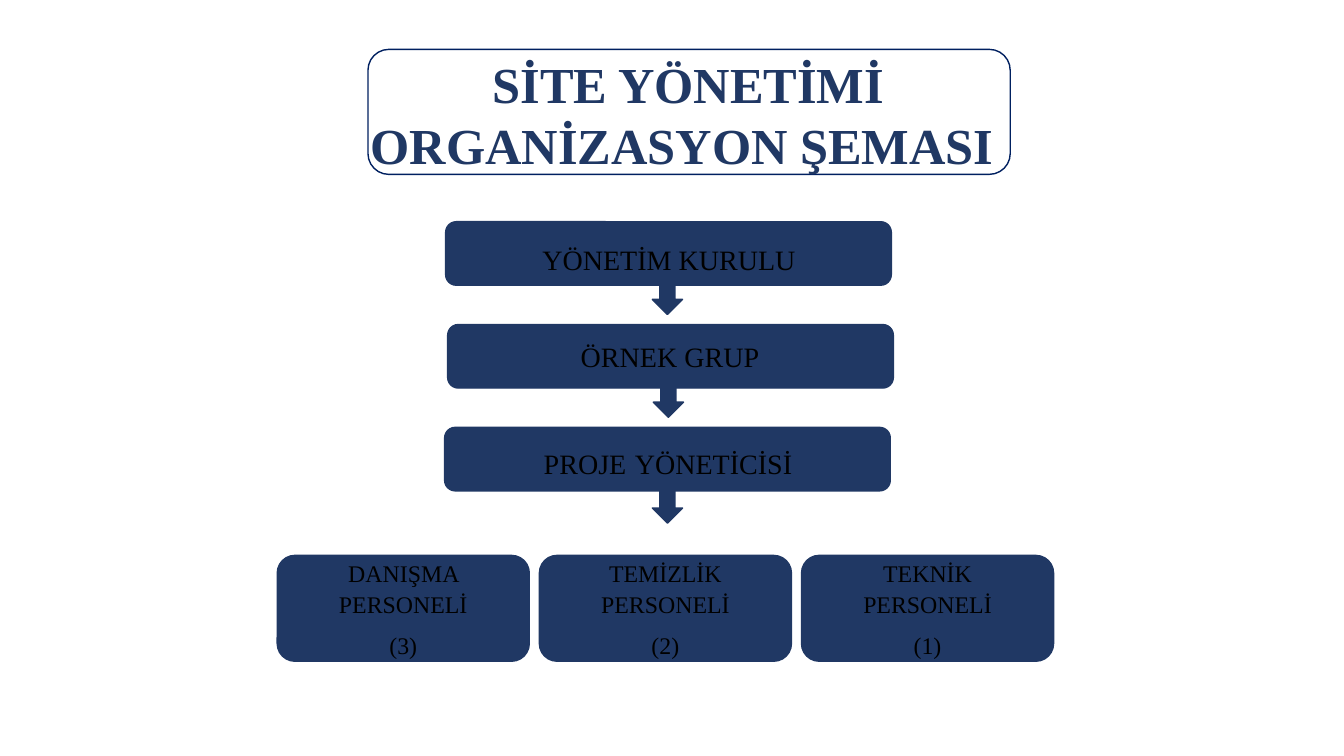
"""Build the site management organisation chart slide."""
import pptx
import pptx.dml.color
import pptx.enum.shapes
import pptx.enum.text
import pptx.util

Inches = pptx.util.Inches
Pt = pptx.util.Pt
SHAPES = pptx.enum.shapes.MSO_SHAPE
ANCHORS = pptx.enum.text.MSO_ANCHOR

NAVY, TITLE_BORDER, BLACK = "203864", "002060", "000000"
TITLE = "SİTE YÖNETİMİ ORGANİZASYON ŞEMASI "
LEVELS = [
    {"runs": [("YÖNETİM KURULU", 20)], "left": 4.42, "label": (4.44, 2.33, 4.39, 0.44), "arrow": (6.47, 2.72)},
    {"runs": [("ÖRNEK GRUP", 20)], "left": 4.44, "label": (4.45, 3.3, 4.39, 0.44), "arrow": (6.48, 3.74)},
    {"runs": [("PROJE", 20), (" ", 24), ("YÖNETİCİSİ", 20)], "left": 4.41,
     "label": (4.43, 4.3, 4.39, 0.51), "arrow": (6.47, 4.79)},
]
TEAMS = [("DANIŞMA PERSONELİ", 3), ("TEMİZLİK PERSONELİ", 2), ("TEKNİK PERSONELİ", 1)]
LEVEL_TOP, LEVEL_STEP, LEVEL_SIZE = 2.2, 1.02, (4.42, 0.63)
ARROW_SIZE = (0.3, 0.4)
TEAM_LEFT, TEAM_TOP, TEAM_STEP, TEAM_SIZE = 2.75, 5.51, 2.6, (2.5, 1.05)
BODY_FORMAT = {"alignment": pptx.enum.text.PP_ALIGN.CENTER, "line_spacing": 1.07, "space_after": Pt(8)}
TITLE_FORMAT = {"alignment": pptx.enum.text.PP_ALIGN.CENTER}


def set_color(color_format, value):
    color_format.rgb = pptx.dml.color.RGBColor.from_string(value)


def set_values(target, values):
    for name, value in values.items():
        setattr(target, name, value)


def add_box(slide, kind, place, fill=NAVY, border=NAVY):
    shape = slide.shapes.add_shape(kind, *map(Inches, place))
    shape.shadow.inherit = False
    if fill:
        shape.fill.solid()
        set_color(shape.fill.fore_color, fill)
    else:
        shape.fill.background()
    set_color(shape.line.color, border)
    shape.line.width = Pt(1)
    return shape


def write(shape, paragraphs, paragraph_format, color=BLACK, bold=False, **frame_values):
    frame = shape.text_frame
    set_values(frame, {"word_wrap": True, **frame_values})
    for index, runs in enumerate(paragraphs):
        paragraph = frame.add_paragraph() if index else frame.paragraphs[0]
        set_values(paragraph, paragraph_format)
        for text, size in runs:
            run = paragraph.add_run()
            run.text = text
            set_values(run.font, {"name": "Times New Roman", "size": Pt(size), "bold": bold})
            set_color(run.font.color, color)


def add_label(slide, place, runs, paragraph_format, **style):
    label = slide.shapes.add_textbox(*map(Inches, place))
    write(label, [runs], paragraph_format, **style)


def main():
    presentation = pptx.Presentation()
    set_values(presentation, {"slide_width": Inches(13.33), "slide_height": Inches(7.5)})
    slide = presentation.slides.add_slide(presentation.slide_layouts[6])

    for level in LEVELS:
        add_box(slide, SHAPES.DOWN_ARROW, (*level["arrow"], *ARROW_SIZE))

    add_box(slide, SHAPES.ROUNDED_RECTANGLE, (3.65, 0.49, 6.37, 1.24), fill=None, border=TITLE_BORDER)
    add_label(slide, (3.33, 0.48, 7, 1.31), [(TITLE, 36)], TITLE_FORMAT, color=NAVY, bold=True)

    for index, level in enumerate(LEVELS):
        top = LEVEL_TOP + index * LEVEL_STEP
        add_box(slide, SHAPES.ROUNDED_RECTANGLE, (level["left"], top, *LEVEL_SIZE))
        add_label(slide, level["label"], level["runs"], BODY_FORMAT)

    for index, (team, count) in enumerate(TEAMS):
        left = TEAM_LEFT + index * TEAM_STEP
        box = add_box(slide, SHAPES.ROUNDED_RECTANGLE, (left, TEAM_TOP, *TEAM_SIZE))
        write(box, [[(team, 17)], [(f"({count})", 17)]], BODY_FORMAT, vertical_anchor=ANCHORS.MIDDLE,
              margin_left=Inches(0.2), margin_right=Inches(0.2))

    presentation.save("out.pptx")


if __name__ == "__main__":
    main()
